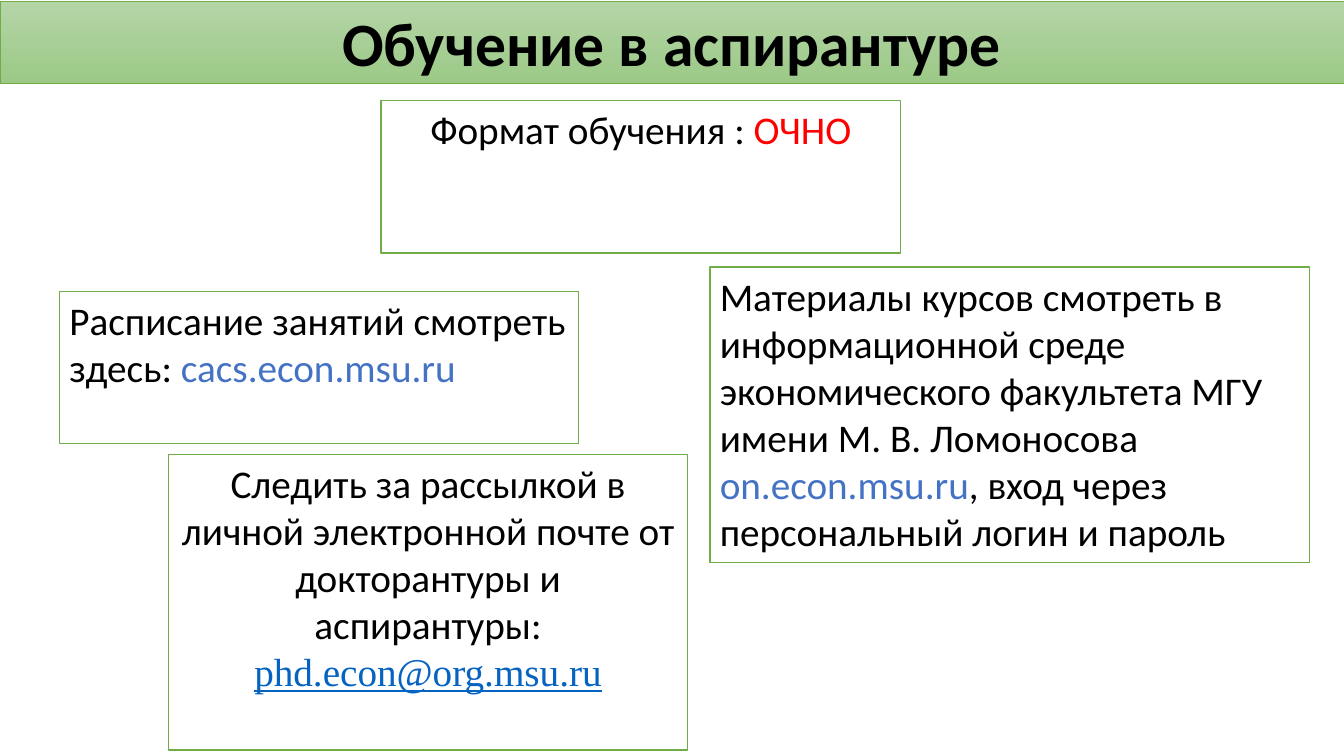
"""Build the slide about postgraduate studies."""
from dataclasses import dataclass

import pptx
import pptx.dml.color
import pptx.enum.shapes
import pptx.enum.text
import pptx.util

EMU_PER_PX = 9144
LEFT = pptx.enum.text.PP_ALIGN.LEFT
CENTER = pptx.enum.text.PP_ALIGN.CENTER


@dataclass(frozen=True)
class Theme:
    text: str = "000000"
    accent: str = "FF0000"
    site: str = "4472C4"
    mail: str = "0563C1"
    paper: str = "FFFFFF"
    border: str = "70AD47"
    banner_top: str = "B5D5A7"
    banner_bottom: str = "9CC987"
    font: str = "Calibri"
    mail_font: str = "Times New Roman"
    title_size: int = 44
    body_size: int = 28
    banner_line: float = 0.5
    card_line: float = 1


THEME = Theme()


@dataclass(frozen=True)
class Span:
    text: str
    color: str = THEME.text
    font: str = THEME.font
    size: int = THEME.body_size
    bold: bool = False
    underline: bool = False


@dataclass(frozen=True)
class Card:
    left: int
    top: int
    width: int
    height: int
    align: pptx.enum.text.PP_ALIGN
    paragraphs: tuple[tuple[Span, ...], ...]


HEADING = Span("Обучение в аспирантуре", size=THEME.title_size, bold=True)
CARDS = (
    Card(59, 289, 515, 151, LEFT, ((
        Span("Расписание занятий смотреть здесь: "),
        Span("cacs.econ.msu.ru", THEME.site),
    ),)),
    Card(704, 265, 595, 293, LEFT, ((
        Span("Материалы курсов смотреть в информационной среде "
             "экономического факультета МГУ имени М. В. Ломоносова "),
        Span("on.econ.msu.ru", THEME.site),
        Span(", вход через персональный логин и пароль"),
    ),)),
    Card(167, 451, 515, 293, CENTER, (
        (Span("Следить за рассылкой в личной электронной почте от "
              "докторантуры и аспирантуры:"),),
        (Span("phd.econ@org.msu.ru", THEME.mail, THEME.mail_font, underline=True),),
    )),
    Card(378, 100, 515, 151, CENTER, ((
        Span("Формат обучения : "),
        Span("ОЧНО", THEME.accent),
    ),)),
)


def px(length: int) -> pptx.util.Emu:
    return pptx.util.Emu(length * EMU_PER_PX)


def rgb(color: str) -> pptx.dml.color.RGBColor:
    return pptx.dml.color.RGBColor.from_string(color)


def add_span(paragraph, span: Span) -> None:
    run = paragraph.add_run()
    run.text = span.text
    run.font.name = span.font
    run.font.size = pptx.util.Pt(span.size)
    run.font.bold = span.bold
    run.font.underline = span.underline
    run.font.color.rgb = rgb(span.color)


def outline(shape, width: float) -> None:
    shape.line.color.rgb = rgb(THEME.border)
    shape.line.width = pptx.util.Pt(width)


def format_banner(banner) -> None:
    banner.left, banner.top, banner.width, banner.height = map(px, (0, 1, 1333, 82))
    banner.fill.gradient()
    banner.fill.gradient_angle = 270
    shades = (THEME.banner_top, THEME.banner_bottom)
    for stop, shade in zip(banner.fill.gradient_stops, shades):
        stop.color.rgb = rgb(shade)
    outline(banner, THEME.banner_line)
    frame = banner.text_frame
    frame.auto_size = pptx.enum.text.MSO_AUTO_SIZE.NONE
    frame.vertical_anchor = pptx.enum.text.MSO_ANCHOR.MIDDLE
    frame.paragraphs[0].alignment = CENTER
    add_span(frame.paragraphs[0], HEADING)


def add_card(slide, card: Card) -> None:
    panel = slide.shapes.add_shape(
        pptx.enum.shapes.MSO_SHAPE.RECTANGLE,
        px(card.left), px(card.top), px(card.width), px(card.height))
    panel.shadow.inherit = False
    panel.fill.solid()
    panel.fill.fore_color.rgb = rgb(THEME.paper)
    outline(panel, THEME.card_line)
    frame = panel.text_frame
    frame.word_wrap = True
    frame.vertical_anchor = pptx.enum.text.MSO_ANCHOR.TOP
    for index, spans in enumerate(card.paragraphs):
        paragraph = frame.add_paragraph() if index else frame.paragraphs[0]
        paragraph.alignment = card.align
        for span in spans:
            add_span(paragraph, span)


def main() -> None:
    deck = pptx.Presentation()
    deck.slide_width, deck.slide_height = px(1333), px(750)
    slide = deck.slides.add_slide(deck.slide_layouts.get_by_name("Title Only"))
    format_banner(slide.shapes.title)
    for card in CARDS:
        add_card(slide, card)
    deck.save("out.pptx")


if __name__ == "__main__":
    main()
